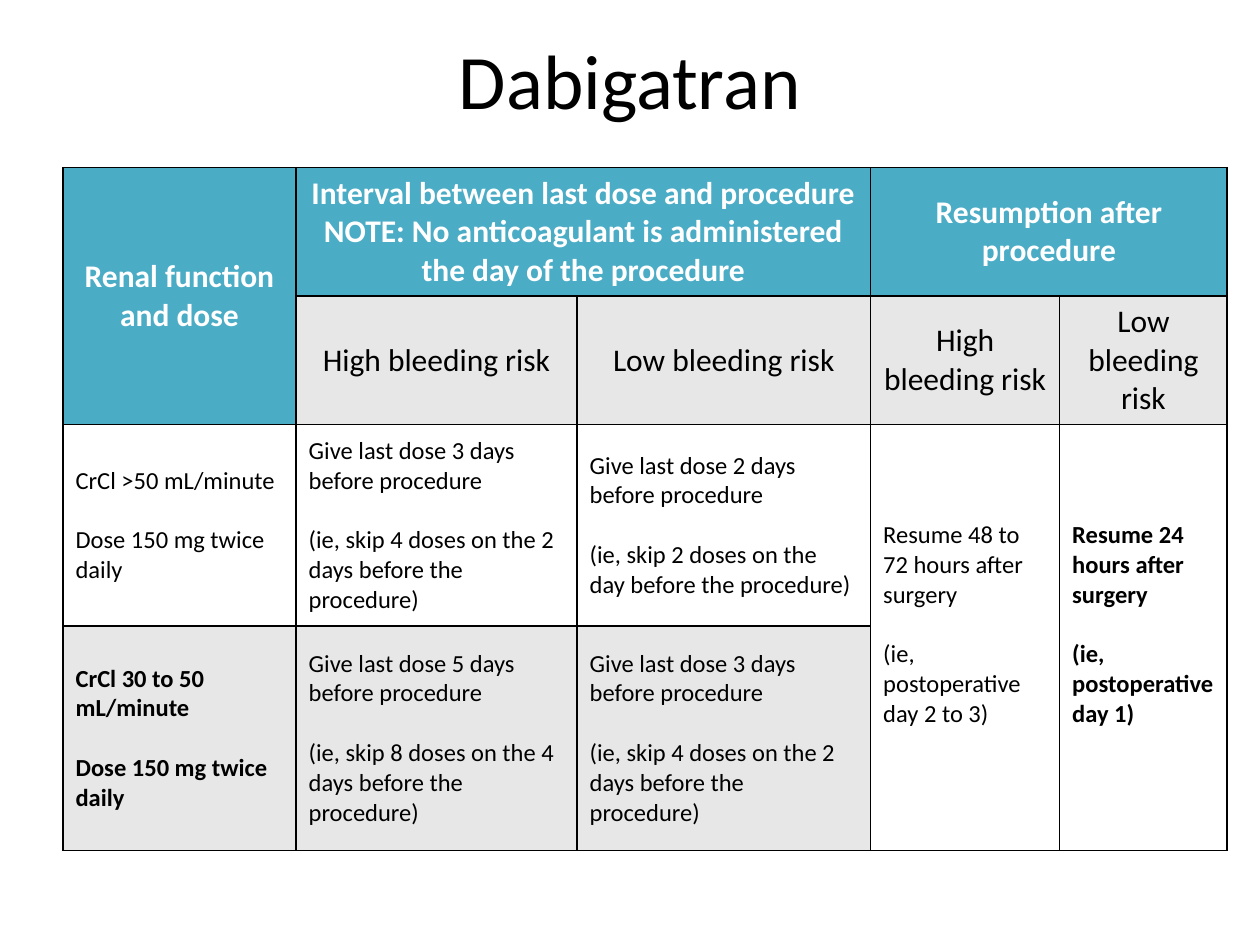
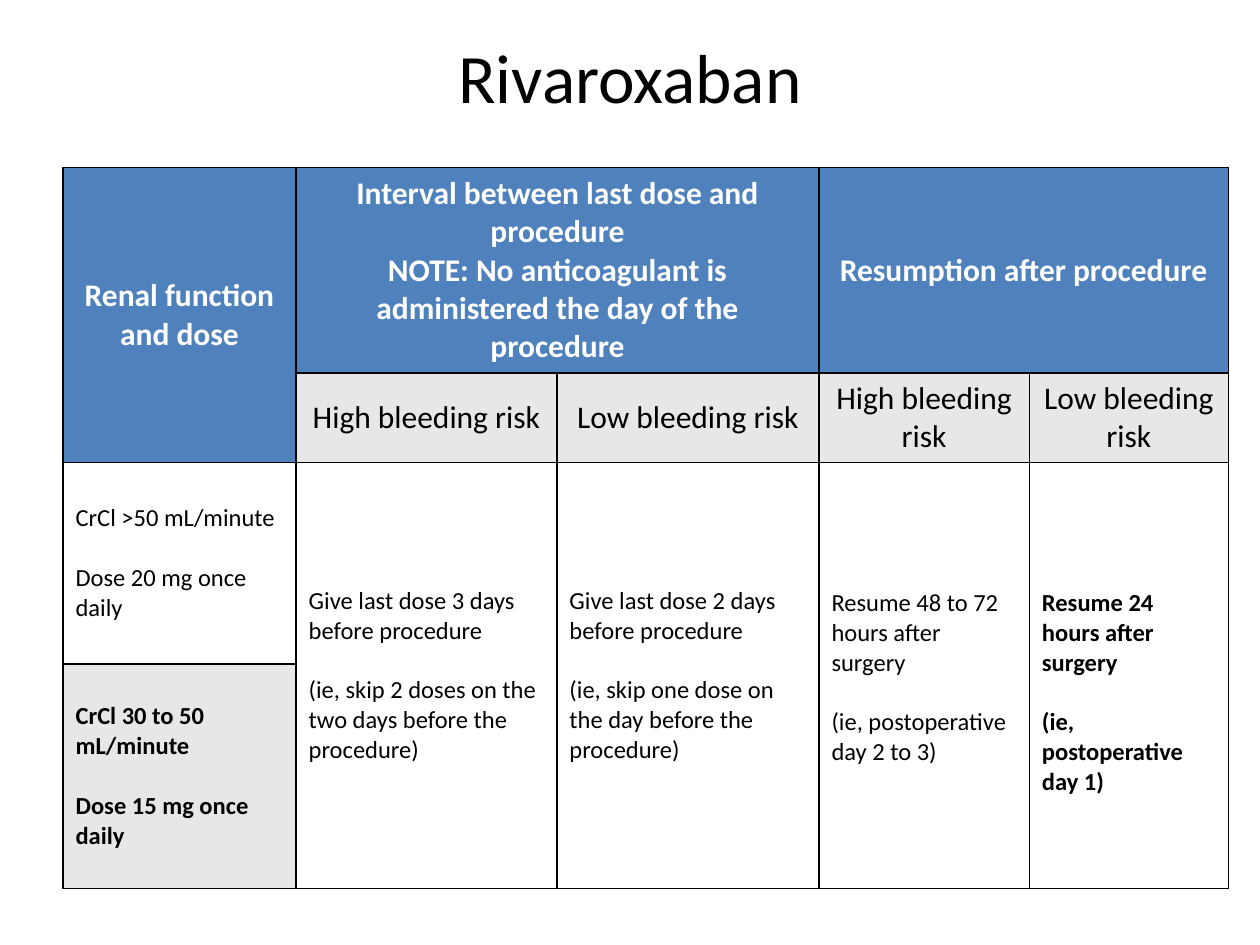
from dataclasses import dataclass

from lxml import etree
from pptx import Presentation
from pptx.dml.color import RGBColor
from pptx.enum.text import MSO_ANCHOR, PP_ALIGN
from pptx.oxml.ns import qn
from pptx.util import Inches, Pt

MIDDLE, TOP = MSO_ANCHOR.MIDDLE, MSO_ANCHOR.TOP
CENTER, LEFT = PP_ALIGN.CENTER, PP_ALIGN.LEFT


@dataclass(frozen=True)
class Theme:
    font: str = "Calibri"
    black: str = "000000"
    white: str = "FFFFFF"
    gray: str = "E7E7E7"
    teal: str = "4BACC6"
    blue: str = "4F81BD"
    head: float = 18
    body: float = 14
    gap: float = 17
    rule: float = 1


THEME = Theme()

RENAL = ["Renal function and dose"]
INTERVAL = ["Interval between last dose and procedure",
            "NOTE: No anticoagulant is administered the day of the procedure"]
RESUME = ["Resumption after procedure"]
RISKS = ["High bleeding risk", "Low bleeding risk"]
LATE = ["Resume 48 to 72 hours after surgery", "(ie, postoperative day 2 to 3)"]
EARLY = ["Resume 24 hours after surgery", "(ie, postoperative day 1)"]


def give(days, skip):
    return [f"Give last dose {days} days before procedure",
            f"(ie, skip {skip} the procedure)"]


def style(para, size, color, bold=False, align=LEFT):
    para.alignment = align
    for run in para.runs:
        font = run.font
        font.name, font.size, font.bold = THEME.font, Pt(size), bold
        font.color.rgb = RGBColor.from_string(color)


def add_title(slide, text, top, height, size):
    box = slide.shapes.add_textbox(Inches(0.5), Inches(top), Inches(9), Inches(height))
    frame = box.text_frame
    frame.word_wrap = True
    frame.vertical_anchor = MIDDLE
    frame.text = text
    style(frame.paragraphs[0], size, THEME.black, align=CENTER)


def add_rules(cell):
    """Draw a thin line on all four sides of a cell."""
    props = cell._tc.get_or_add_tcPr()
    for side in ("lnL", "lnR", "lnT", "lnB"):
        line = etree.SubElement(props, qn(f"a:{side}"), w=str(Pt(THEME.rule)))
        fill = etree.SubElement(line, qn("a:solidFill"))
        etree.SubElement(fill, qn("a:srgbClr"), val=THEME.black)


def add_grid(slide, widths, heights):
    shape = slide.shapes.add_table(
        len(heights), len(widths), Inches(0.5), Inches(1.33),
        Inches(sum(widths)), Inches(sum(heights)))
    table = shape.table
    table.first_row = table.horz_banding = False
    for col, width in zip(table.columns, widths):
        col.width = Inches(width)
    for row, height in zip(table.rows, heights):
        row.height = Inches(height)
    for cell in table.iter_cells():
        add_rules(cell)
    return table


def put(table, row, col, lines, fill, span=(1, 1), size=THEME.body,
        color=THEME.black, bold=False, align=LEFT, gap=THEME.gap, drop=None):
    """Fill one cell; drop hangs its text that far below the top edge."""
    rows, cols = span
    cell = table.cell(row, col)
    if span != (1, 1):
        cell.merge(table.cell(row + rows - 1, col + cols - 1))
    for r in range(row, row + rows):
        for c in range(col, col + cols):
            part = table.cell(r, c)
            part.fill.solid()
            part.fill.fore_color.rgb = RGBColor.from_string(fill)
    cell.vertical_anchor = TOP if drop else MIDDLE
    if drop:
        cell.margin_top = Inches(drop)
    cell.text_frame.text = "\n".join(lines)
    for i, para in enumerate(cell.text_frame.paragraphs):
        style(para, size, color, bold, align)
        if i and gap:
            para.space_before = Pt(gap)


def add_heads(table, fill):
    look = dict(size=THEME.head, align=CENTER, gap=0)
    for col, lines, span in ((0, RENAL, (2, 1)), (1, INTERVAL, (1, 2)),
                             (3, RESUME, (1, 2))):
        put(table, 0, col, lines, fill, span, color=THEME.white, bold=True, **look)
    for i, risk in enumerate(RISKS * 2):
        put(table, 1, i + 1, [risk], THEME.gray, **look)


def add_body(table, doses, waits, drop):
    """Fill the two renal rows; a single row of waits spans both."""
    levels = ("CrCl >50 mL/minute", "CrCl 30 to 50 mL/minute")
    fills = (THEME.white, THEME.gray)
    for i, (level, dose) in enumerate(zip(levels, doses)):
        put(table, i + 2, 0, [level, f"Dose {dose} daily"], fills[i], bold=i == 1)
    span = (3 - len(waits), 1)
    for i, pair in enumerate(waits):
        for j, lines in enumerate(pair):
            put(table, i + 2, j + 1, lines, fills[i], span)
    put(table, 2, 3, LATE, THEME.white, (2, 1), drop=drop)
    put(table, 2, 4, EARLY, THEME.white, (2, 1), bold=True, drop=drop)


def main():
    deck = Presentation()
    deck.slide_width, deck.slide_height = Inches(10), Inches(7.5)
    blank = deck.slide_layouts[6]

    slide = deck.slides.add_slide(blank)
    add_title(slide, "Dabigatran", 0, 1.25, 44)
    table = add_grid(slide, (1.85, 2.23, 2.33, 1.5, 1.33), (1.02, 1.02, 1.6, 1.78))
    add_heads(table, THEME.teal)
    add_body(table, ["150 mg twice"] * 2, [
        (give(3, "4 doses on the 2 days before"), give(2, "2 doses on the day before")),
        (give(5, "8 doses on the 4 days before"), give(3, "4 doses on the 2 days before")),
    ], drop=0.76)

    slide = deck.slides.add_slide(blank)
    add_title(slide, "Rivaroxaban", 0.2, 0.8, 39.6)
    table = add_grid(slide, (1.85, 2.07, 2.08, 1.67, 1.58), (1.63, 0.71, 1.6, 1.78))
    add_heads(table, THEME.blue)
    add_body(table, ["20 mg once", "15 mg once"], [
        (give(3, "2 doses on the two days before"), give(2, "one dose on the day before")),
    ], drop=1)

    deck.save("out.pptx")


if __name__ == "__main__":
    main()
